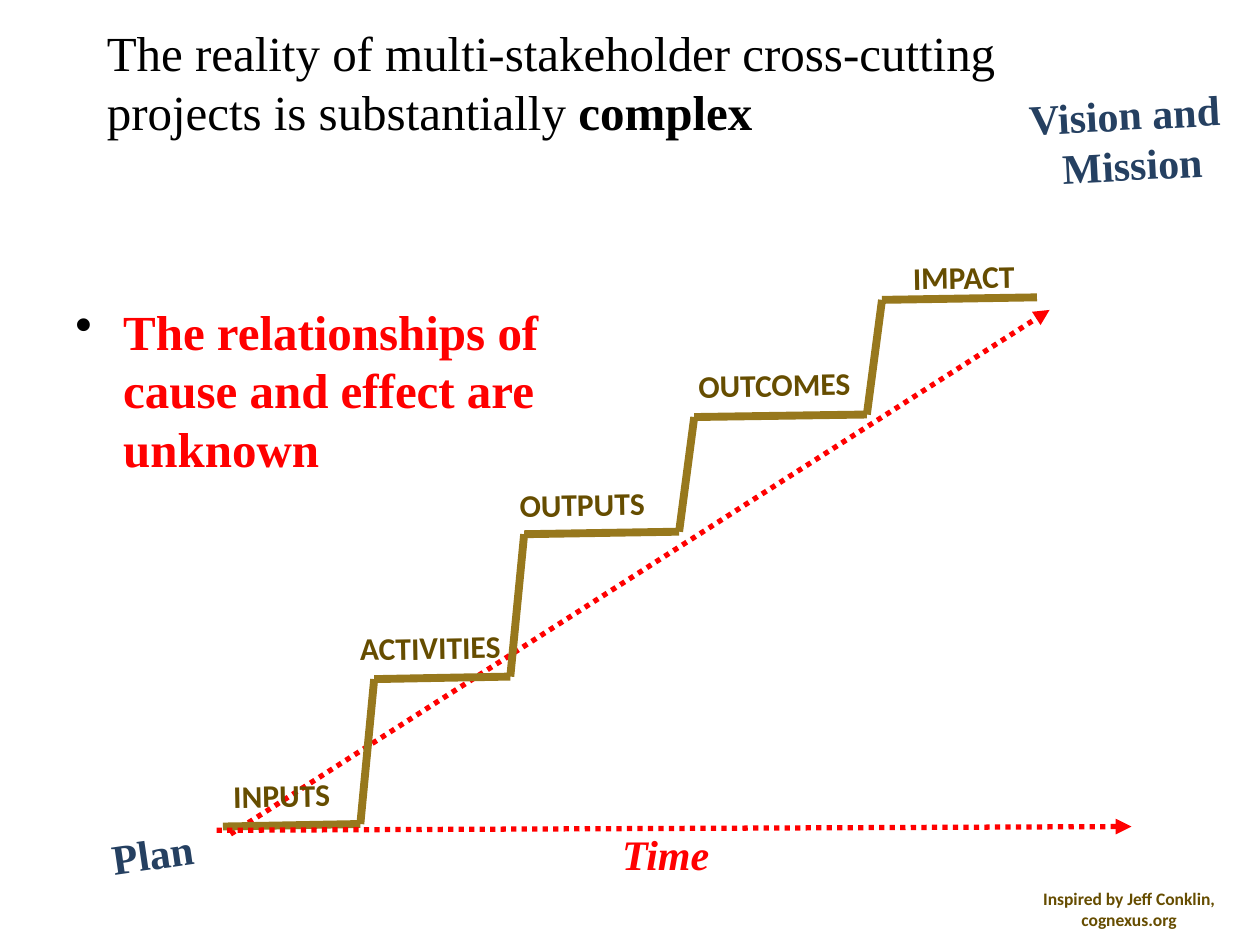
from itertools import pairwise

from lxml.etree import SubElement
from pptx import Presentation
from pptx.dml.color import RGBColor
from pptx.enum.dml import MSO_LINE
from pptx.enum.shapes import MSO_CONNECTOR
from pptx.enum.text import MSO_AUTO_SIZE, PP_ALIGN
from pptx.oxml.ns import qn
from pptx.util import Inches, Pt

BLACK = RGBColor(0x00, 0x00, 0x00)
RED = RGBColor(0xFF, 0x00, 0x00)
NAVY = RGBColor(0x25, 0x40, 0x61)
GOLD = RGBColor(0x97, 0x78, 0x1D)
BROWN = RGBColor(0x66, 0x4D, 0x00)
SERIF, SANS = "Times New Roman", "Calibri"
LEFT, MID, RIGHT = PP_ALIGN.LEFT, PP_ALIGN.CENTER, PP_ALIGN.RIGHT

deck = Presentation()
deck.slide_width, deck.slide_height = Inches(10), Inches(7.5)
slide = deck.slides.add_slide(deck.slide_layouts[6])

# Grid of 10 columns by 7.5 rows
COL = deck.slide_width / 10
ROW = deck.slide_height / 7.5


def write(text, x, y, w, h, size, color, font=SERIF, bold=True, align=LEFT,
          turn=0, wrap=True, grow=False):
    box = slide.shapes.add_textbox(int(x * COL), int(y * ROW), int(w * COL), int(h * ROW))
    box.rotation = turn
    frame = box.text_frame
    frame.word_wrap = wrap
    frame.auto_size = MSO_AUTO_SIZE.SHAPE_TO_FIT_TEXT if grow else MSO_AUTO_SIZE.NONE
    frame.text = text
    for para in frame.paragraphs:
        para.alignment = align
        for run in para.runs:
            run.font.name, run.font.size = font, Pt(size)
            run.font.bold = bold
            run.font.color.rgb = color
    return frame.paragraphs[0]


def draw(start, end, color, width, arrow=False):
    """Draw a solid line, or a dotted one with an arrowhead at its end."""
    (x1, y1), (x2, y2) = start, end
    line = slide.shapes.add_connector(
        MSO_CONNECTOR.STRAIGHT,
        int(x1 * COL), int(y1 * ROW), int(x2 * COL), int(y2 * ROW))
    line.line.color.rgb = color
    line.line.width = Pt(width)
    if arrow:
        line.line.dash_style = MSO_LINE.ROUND_DOT
        SubElement(line.line._get_or_add_ln(), qn("a:tailEnd"), type="triangle")
    SubElement(line._element.spPr, qn("a:effectLst"))


# Title
title = write("The reality of multi-stakeholder cross-cutting projects is substantially ",
              0.75, 0.13, 8.5, 0.95, 28, BLACK, bold=False)
key = title.add_run()
key.text = "complex"
key.font.name, key.font.size, key.font.bold = SERIF, Pt(28), True
key.font.color.rgb = BLACK

# Bullet point
point = write("The relationships of cause and effect are unknown",
              0.5, 2.34, 4.74, 4.95, 28, RED)
props = point._p.get_or_add_pPr()
props.set("marL", str(Inches(0.38)))
props.set("indent", str(-Inches(0.38)))
tint = SubElement(props, qn("a:buClr"))
SubElement(tint, qn("a:srgbClr"), val=str(BLACK))
SubElement(props, qn("a:buChar"), char="•")

# Planned path
draw((1.83, 6.62), (8.33, 2.46), RED, 3, arrow=True)
write("Plan", 0.67, 6.52, 1.12, 0.77, 24, NAVY, align=MID, turn=351.6, wrap=False)

# Staircase
corners = [(1.77, 6.56), (2.86, 6.54), (2.97, 5.39), (4.05, 5.37), (4.16, 4.24),
           (5.39, 4.22), (5.51, 3.31), (6.88, 3.29), (7, 2.38), (8.23, 2.36)]
for start, end in pairwise(corners):
    draw(start, end, GOLD, 4.5)

steps = [
    ("INPUTS", 1.41, 6.11, 1.65, MID),
    ("ACTIVITIES", 2.36, 4.94, 1.71, RIGHT),
    ("OUTPUTS", 3.82, 3.8, 1.6, MID),
    ("OUTCOMES", 5.42, 2.85, 1.45, MID),
    ("IMPACT", 6.7, 2, 1.45, RIGHT),
]
for name, x, y, w, align in steps:
    write(name, x, y, w, 0.4, 18, BROWN, SANS, align=align, turn=359, grow=True)

# Credit
write("Inspired by Jeff Conklin, cognexus.org", 7.92, 7, 2.08, 0.5, 10, BROWN, SANS, align=MID)

# Time axis
time = write("Time", 4.84, 6.53, 1.14, 0.51, 24, RED, grow=True)
time.runs[0].font.italic = True
draw((1.72, 6.59), (8.98, 6.56), RED, 3, arrow=True)

# Goal
write("Vision and \nMission", 8.18, 0.65, 1.66, 2.19, 24, NAVY, align=MID, turn=357, wrap=False)

deck.save("out.pptx")
